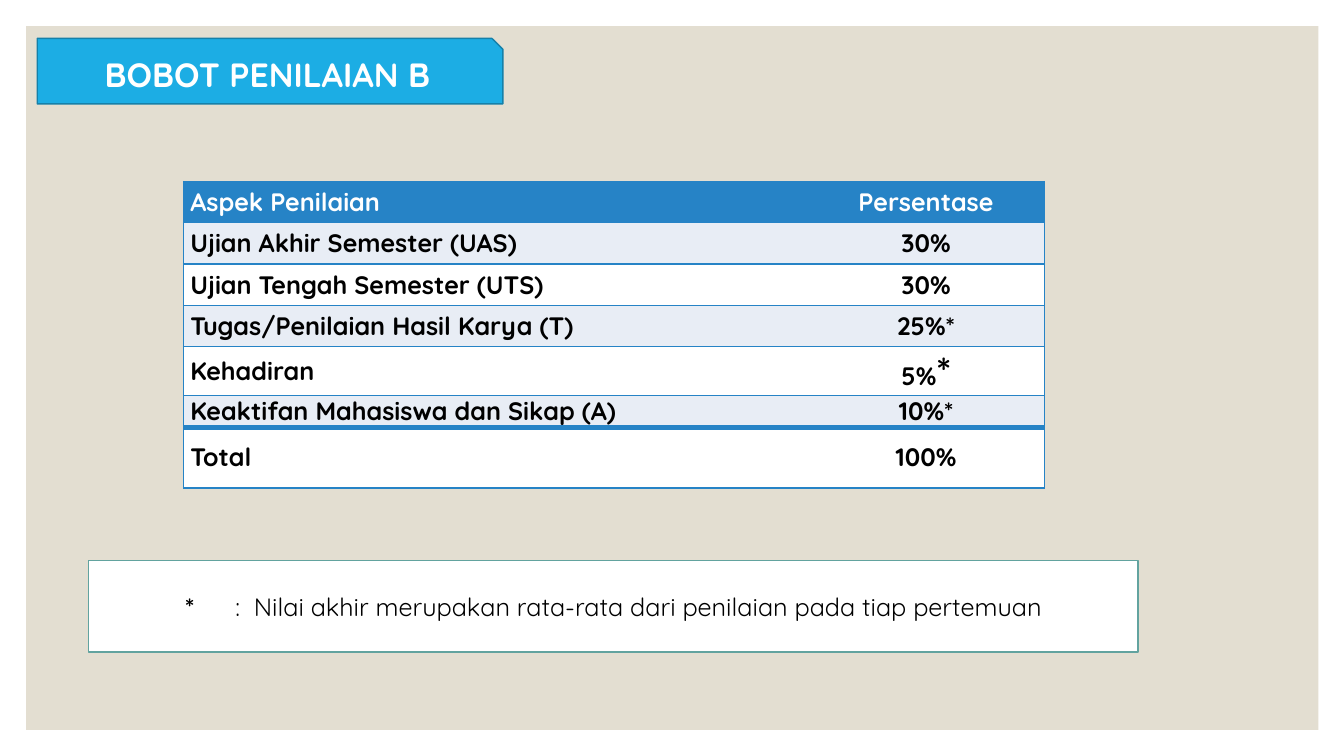
"""Builds the grading weight slide with a table and a footnote box."""
from dataclasses import dataclass

import lxml.etree
import pptx
import pptx.dml.color
import pptx.enum.shapes
import pptx.enum.text
import pptx.oxml.ns
import pptx.util

Pt = pptx.util.Pt
RGB = pptx.dml.color.RGBColor.from_string
SHAPE = pptx.enum.shapes.MSO_SHAPE
ALIGN = pptx.enum.text.PP_ALIGN
ANCHOR = pptx.enum.text.MSO_ANCHOR
qn = pptx.oxml.ns.qn


@dataclass(frozen=True)
class Theme:
    """Holds the colours, font and type sizes."""
    font: str = "Quicksand"
    panel: str = "E3DED1"
    banner: str = "1CADE4"
    banner_line: str = "1580A9"
    table: str = "2683C6"
    band: str = "E8EDF5"
    note_line: str = "62A39F"
    white: str = "FFFFFF"
    black: str = "000000"
    title: int = 24
    body: int = 18
    star: int = 28


T = Theme()
HEADER = ("Aspek Penilaian", "Persentase")
WEIGHTS = [
    ("Ujian Akhir Semester (UAS)", "30%"),
    ("Ujian Tengah Semester (UTS)", "30%"),
    ("Tugas/Penilaian Hasil Karya (T)", "25%*"),
    ("Kehadiran", "5%", "*"),
    ("Keaktifan Mahasiswa dan Sikap (A)", "10%*"),
    ("Total", "100%"),
]
ROW_HEIGHTS = [29.5] * 4 + [35, 22.5, 43.5]
COLUMN_WIDTHS = [446, 169]


def apply(obj, fmt):
    """Set each attribute named in a dict of format values."""
    for name, value in fmt.items():
        setattr(obj, name, value)


def add_run(p, text, color, size=T.body, bold=True):
    """Append a formatted run to a paragraph."""
    r = p.add_run()
    r.text = text
    apply(r.font, {"name": T.font, "size": Pt(size), "bold": bold})
    r.font.color.rgb = RGB(color)


def add_box(s, kind, box, fill, line=None):
    """Add a filled preset shape, outlined when a line colour is given."""
    sp = s.shapes.add_shape(kind, *map(Pt, box))
    sp.shadow.inherit = False
    sp.fill.solid()
    sp.fill.fore_color.rgb = RGB(fill)
    if line:
        sp.line.color.rgb = RGB(line)
        sp.line.width = Pt(1)
    else:
        sp.line.fill.background()
    return sp


def place_title(s, text, box):
    """Move the title placeholder to the front and format it."""
    sp = s.shapes.title
    apply(sp, dict(zip(("left", "top", "width", "height"), map(Pt, box))))
    tf = sp.text_frame
    apply(tf, {"vertical_anchor": ANCHOR.MIDDLE, "word_wrap": True,
               "auto_size": pptx.enum.text.MSO_AUTO_SIZE.NONE})
    p = tf.paragraphs[0]
    p.alignment = ALIGN.CENTER
    add_run(p, text, T.white, T.title)
    sp.element.getparent().append(sp.element)


def set_borders(cell, widths):
    """Draw left, right, top and bottom borders; zero width hides one."""
    tc_pr = cell._tc.get_or_add_tcPr()
    for side, width in zip("LRTB", widths):
        ln = lxml.etree.SubElement(tc_pr, qn(f"a:ln{side}"), w=str(Pt(width)))
        if width:
            fill = lxml.etree.SubElement(ln, qn("a:solidFill"))
            lxml.etree.SubElement(fill, qn("a:srgbClr"), val=T.table)
        else:
            lxml.etree.SubElement(ln, qn("a:noFill"))


def fill_cell(cell, texts, color, fill, align, widths):
    """Write and style one cell; a second text is set larger."""
    set_borders(cell, widths)
    cell.fill.solid()
    cell.fill.fore_color.rgb = RGB(fill)
    apply(cell, {"vertical_anchor": ANCHOR.MIDDLE, "margin_left": Pt(5),
                 "margin_right": Pt(5), "margin_top": 0, "margin_bottom": 0})
    p = cell.text_frame.paragraphs[0]
    p.alignment = align
    for text, size in zip(texts, (T.body, T.star)):
        add_run(p, text, color, size)


def add_weights(s, left, top):
    """Add the table of assessment weights."""
    rows = [HEADER] + WEIGHTS
    last = len(rows) - 1
    tbl = s.shapes.add_table(len(rows), 2, Pt(left), Pt(top),
                             Pt(sum(COLUMN_WIDTHS)), Pt(sum(ROW_HEIGHTS))).table
    for column, width in zip(tbl.columns, COLUMN_WIDTHS):
        column.width = Pt(width)
    for i, (aspect, *share) in enumerate(rows):
        tbl.rows[i].height = Pt(ROW_HEIGHTS[i])
        color = T.black if i else T.white
        fill = (T.band if i % 2 else T.white) if i else T.table
        above = 4 if i == last else 1
        below = 4 if i == last - 1 else 1
        fill_cell(tbl.cell(i, 0), [aspect], color, fill, ALIGN.LEFT, (1, 0, above, below))
        fill_cell(tbl.cell(i, 1), share, color, fill, ALIGN.CENTER, (0, 1, above, below))


def add_note(s, box, mark, text):
    """Add the outlined footnote box."""
    tf = add_box(s, SHAPE.RECTANGLE, box, T.white, T.note_line).text_frame
    apply(tf, {"word_wrap": True, "vertical_anchor": ANCHOR.MIDDLE})
    p = tf.paragraphs[0]
    p.alignment = ALIGN.CENTER
    add_run(p, mark + "\t", T.black)
    add_run(p, text, T.black, bold=False)


def main():
    """Build and save the slide."""
    prs = pptx.Presentation()
    apply(prs, {"slide_width": Pt(960), "slide_height": Pt(540)})
    s = prs.slides.add_slide(prs.slide_layouts[5])
    add_box(s, SHAPE.RECTANGLE, (18.7, 18.7, 923, 502.6), T.panel)
    add_weights(s, 131, 129.6)
    add_box(s, SHAPE.SNIP_1_RECTANGLE, (26.6, 27.4, 332.6, 46.8), T.banner, T.banner_line)
    place_title(s, "BOBOT PENILAIAN B", (26.6, 27.4, 328.7, 50.7))
    add_note(s, (63.4, 400.3, 749.5, 65.5), "*",
             ":  Nilai akhir merupakan rata-rata dari penilaian pada tiap pertemuan")
    prs.save("out.pptx")


if __name__ == "__main__":
    main()
